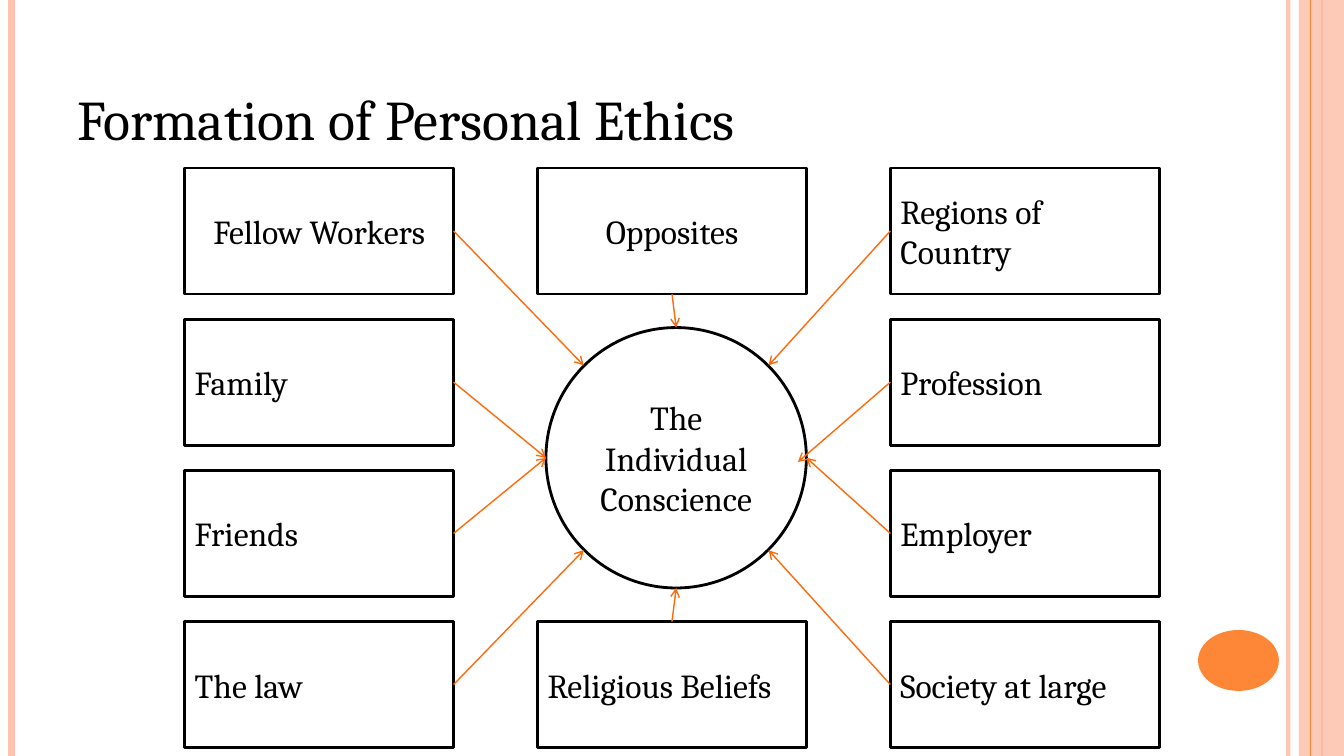
import lxml.etree
import pptx
import pptx.dml.color
import pptx.enum.shapes
import pptx.enum.text
import pptx.oxml.ns
import pptx.util

SHAPE = pptx.enum.shapes.MSO_SHAPE
ALIGN = pptx.enum.text.PP_ALIGN
ANCHOR = pptx.enum.text.MSO_ANCHOR
PX = 9525  # EMU per px, 96 px to the inch


def px(*lengths):
    return [pptx.util.Emu(length * PX) for length in lengths]


def color(hex_string):
    return pptx.dml.color.RGBColor.from_string(hex_string)


def add_element(parent, tag, **attributes):
    return lxml.etree.SubElement(parent, pptx.oxml.ns.qn(tag), attributes)


def set_opacity(fill, percent):
    """Make a solid fill partly transparent."""
    solid = fill._xPr.find(pptx.oxml.ns.qn("a:solidFill"))
    add_element(solid[0], "a:alpha", val=str(percent * 1000))


class EthicsSlide:
    font_name = "Cambria"
    ink, paper = "000000", "FFFFFF"
    accent, pale, arrow_color = "FE8637", "FEC3AE", "FF6B0A"

    def __init__(self, deck):
        self.page = deck.slides.add_slide(deck.slide_layouts[5])

    def style_text(self, frame, size, align):
        for para in frame.paragraphs:
            para.alignment = align
            for span in para.runs:
                span.font.name = self.font_name
                span.font.size = pptx.util.Pt(size)
                span.font.color.rgb = color(self.ink)

    def title(self, text, left, top, width, height):
        box = self.page.shapes.title
        box.left, box.top, box.width, box.height = px(left, top, width, height)
        frame = box.text_frame
        frame.text = text
        frame.word_wrap = True
        frame.auto_size = pptx.enum.text.MSO_AUTO_SIZE.NONE
        frame.vertical_anchor = ANCHOR.BOTTOM
        self.style_text(frame, 40, ALIGN.LEFT)

    def shape(self, kind, left, top, width, height, fill, opacity=100):
        """Add a shape without outline."""
        shape = self.page.shapes.add_shape(kind, *px(left, top, width, height))
        shape.shadow.inherit = False
        shape.fill.solid()
        shape.fill.fore_color.rgb = color(fill)
        if opacity < 100:
            set_opacity(shape.fill, opacity)
        shape.line.fill.background()
        return shape

    def node(self, kind, text, left, top, width, height, align):
        """Add an outlined shape with text."""
        shape = self.shape(kind, left, top, width, height, self.paper)
        shape.line.color.rgb = color(self.ink)
        shape.line.width = pptx.util.Pt(2)
        frame = shape.text_frame
        frame.text = text
        frame.word_wrap = True
        frame.vertical_anchor = ANCHOR.MIDDLE
        self.style_text(frame, 24, align)

    def line(self, start, end, stroke, weight, opacity=100):
        line = self.page.shapes.add_connector(
            pptx.enum.shapes.MSO_CONNECTOR.STRAIGHT, *px(*start, *end))
        line.line.color.rgb = color(stroke)
        line.line.width = pptx.util.Pt(weight)
        if opacity < 100:
            set_opacity(line.line.fill, opacity)
        add_element(line._element.spPr, "a:effectLst")
        return line

    def arrow(self, start, end):
        line = self.line(start, end, self.arrow_color, 1)
        add_element(line.line._get_or_add_ln(), "a:tailEnd", type="arrow")

    def side_decoration(self):
        bottom = 720
        self.line((1227, 0), (1227, bottom), self.pale, 3, 93)
        self.line((11, 0), (11, bottom), self.pale, 4.5)
        self.line((1259, 0), (1259, bottom), self.accent, 1.5)
        self.shape(SHAPE.RECTANGLE, 1237, 0, 43, bottom, self.pale, 87)
        self.line((1248, 0), (1248, bottom), self.accent, 0.75)
        self.shape(SHAPE.OVAL, 1141, 600, 77, 58, self.accent)


def main():
    deck = pptx.Presentation()
    deck.slide_width, deck.slide_height = px(1280, 720)
    slide = EthicsSlide(deck)
    slide.side_decoration()
    slide.title("Formation of Personal Ethics", 64, 29, 1045, 120)

    circle_left, circle_top, diameter = 520, 312, 248
    radius = diameter // 2
    center_x, center_y = circle_left + radius, circle_top + radius
    diagonal = round(radius * 0.71)
    slide.node(SHAPE.OVAL, "The Individual Conscience",
               circle_left, circle_top, diameter, diameter, ALIGN.CENTER)

    box_width, box_height = 256, 120
    column_lefts = [176, 512, 848]
    row_tops = [160 + 144 * row for row in range(4)]
    influences = [
        ["Fellow Workers", "Family", "Friends", "The law"],
        ["Opposites", None, None, "Religious Beliefs"],
        ["Regions of Country", "Profession", "Employer", "Society at large"],
    ]
    centered = {"Fellow Workers", "Opposites"}
    reach = [-diagonal, 0, 0, diagonal]
    arrows = []
    for column, (left, names) in enumerate(zip(column_lefts, influences)):
        side = column - 1
        for row, (top, name) in enumerate(zip(row_tops, names)):
            if name is None:
                continue
            align = ALIGN.CENTER if name in centered else ALIGN.LEFT
            slide.node(SHAPE.RECTANGLE, name, left, top, box_width, box_height, align)
            if side == 0:
                start = (left + box_width // 2, top + (box_height if row == 0 else 0))
                end = (center_x, center_y + (-radius if row == 0 else radius))
            else:
                start = (left + (box_width if side < 0 else 0), top + box_height // 2)
                across = diagonal if reach[row] else radius
                end = (center_x + side * across, center_y + reach[row])
            if name == "Profession":
                end = (760, 440)
            arrows.append((start, end))
    for start, end in arrows:
        slide.arrow(start, end)

    deck.save("out.pptx")


if __name__ == "__main__":
    main()
